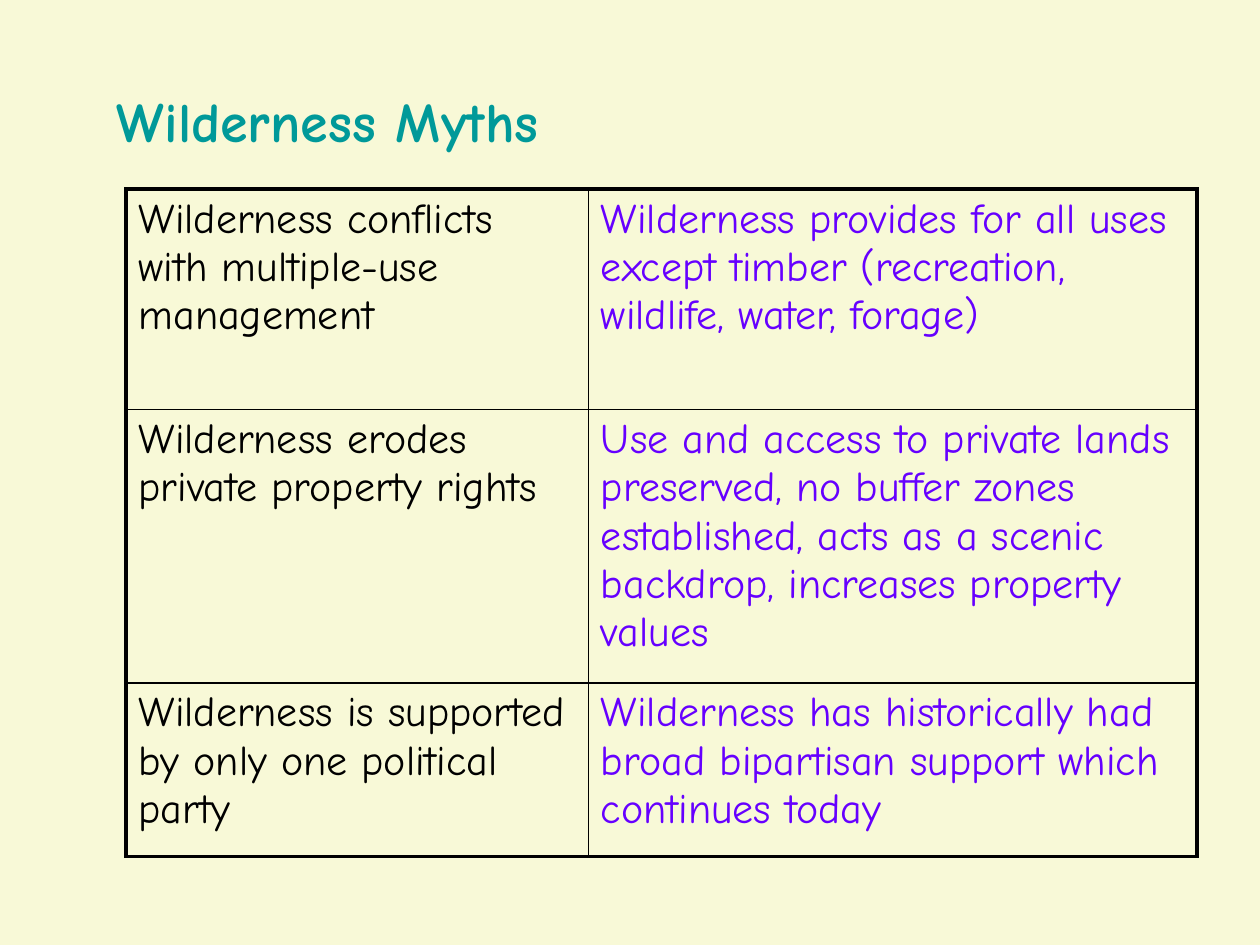
from dataclasses import dataclass

from lxml.etree import SubElement
from pptx import Presentation
from pptx.dml.color import RGBColor
from pptx.enum.text import MSO_ANCHOR
from pptx.oxml.ns import qn
from pptx.util import Inches, Pt

FONT = "Comic Neue"
CREAM = RGBColor(0xF8, 0xF9, 0xD7)
TEAL = RGBColor(0x00, 0x99, 0x99)
BLACK = RGBColor(0x00, 0x00, 0x00)
VIOLET = RGBColor(0x66, 0x00, 0xFF)
OUTER_LINE, INNER_LINE = Pt(2.25), Pt(1)
COLUMN_WIDTHS = (3.67, 4.83)


@dataclass(frozen=True)
class MythRow:
    myth: str
    fact: str
    height: float


MYTHS = (
    MythRow(
        "Wilderness conflicts with multiple-use management",
        "Wilderness provides for all uses except timber (recreation, wildlife, water, forage)",
        1.75,
    ),
    MythRow(
        "Wilderness erodes private property rights",
        "Use and access to private lands preserved, no buffer zones established, "
        "acts as a scenic backdrop, increases property values",
        2.17,
    ),
    MythRow(
        "Wilderness is supported by only one political party",
        "Wilderness has historically had broad bipartisan support which continues today",
        1.38,
    ),
)


def style_text(paragraph, size: float, color: RGBColor, bold: bool = False) -> None:
    font = paragraph.font
    font.name, font.size, font.bold = FONT, Pt(size), bold
    font.color.rgb = color


def add_title(slide, text: str) -> None:
    shape = slide.shapes.add_textbox(Inches(0.83), Inches(0.58), Inches(4.58), Inches(0.75))
    frame = shape.text_frame
    frame.word_wrap = True
    frame.vertical_anchor = MSO_ANCHOR.MIDDLE
    frame.text = text
    style_text(frame.paragraphs[0], 32, TEAL, bold=True)


def set_borders(cell, outer_sides: dict[str, bool]) -> None:
    properties = cell._tc.get_or_add_tcPr()
    for side, outer in outer_sides.items():
        width = OUTER_LINE if outer else INNER_LINE
        line = SubElement(properties, qn(f"a:{side}"), w=str(int(width)))
        fill = SubElement(line, qn("a:solidFill"))
        SubElement(fill, qn("a:srgbClr"), val=str(BLACK))


def add_myth_table(slide, myths: tuple[MythRow, ...]) -> None:
    last_row, last_column = len(myths) - 1, len(COLUMN_WIDTHS) - 1
    table = slide.shapes.add_table(
        len(myths), len(COLUMN_WIDTHS), Inches(1), Inches(1.5),
        Inches(sum(COLUMN_WIDTHS)), Inches(sum(row.height for row in myths)),
    ).table
    table.first_row = table.horz_banding = False
    for column, width in zip(table.columns, COLUMN_WIDTHS):
        column.width = Inches(width)
    for r, row in enumerate(myths):
        table.rows[r].height = Inches(row.height)
        for c, (text, color) in enumerate(((row.myth, BLACK), (row.fact, VIOLET))):
            cell = table.cell(r, c)
            cell.text = text
            style_text(cell.text_frame.paragraphs[0], 24, color)
            set_borders(cell, {
                "lnL": c == 0, "lnR": c == last_column,
                "lnT": r == 0, "lnB": r == last_row,
            })
            cell.fill.background()


def main() -> None:
    presentation = Presentation()
    presentation.slide_width, presentation.slide_height = Inches(10), Inches(7.5)
    slide = presentation.slides.add_slide(presentation.slide_layouts[6])
    slide.background.fill.solid()
    slide.background.fill.fore_color.rgb = CREAM
    add_title(slide, "Wilderness Myths")
    add_myth_table(slide, MYTHS)
    presentation.save("out.pptx")


if __name__ == "__main__":
    main()
